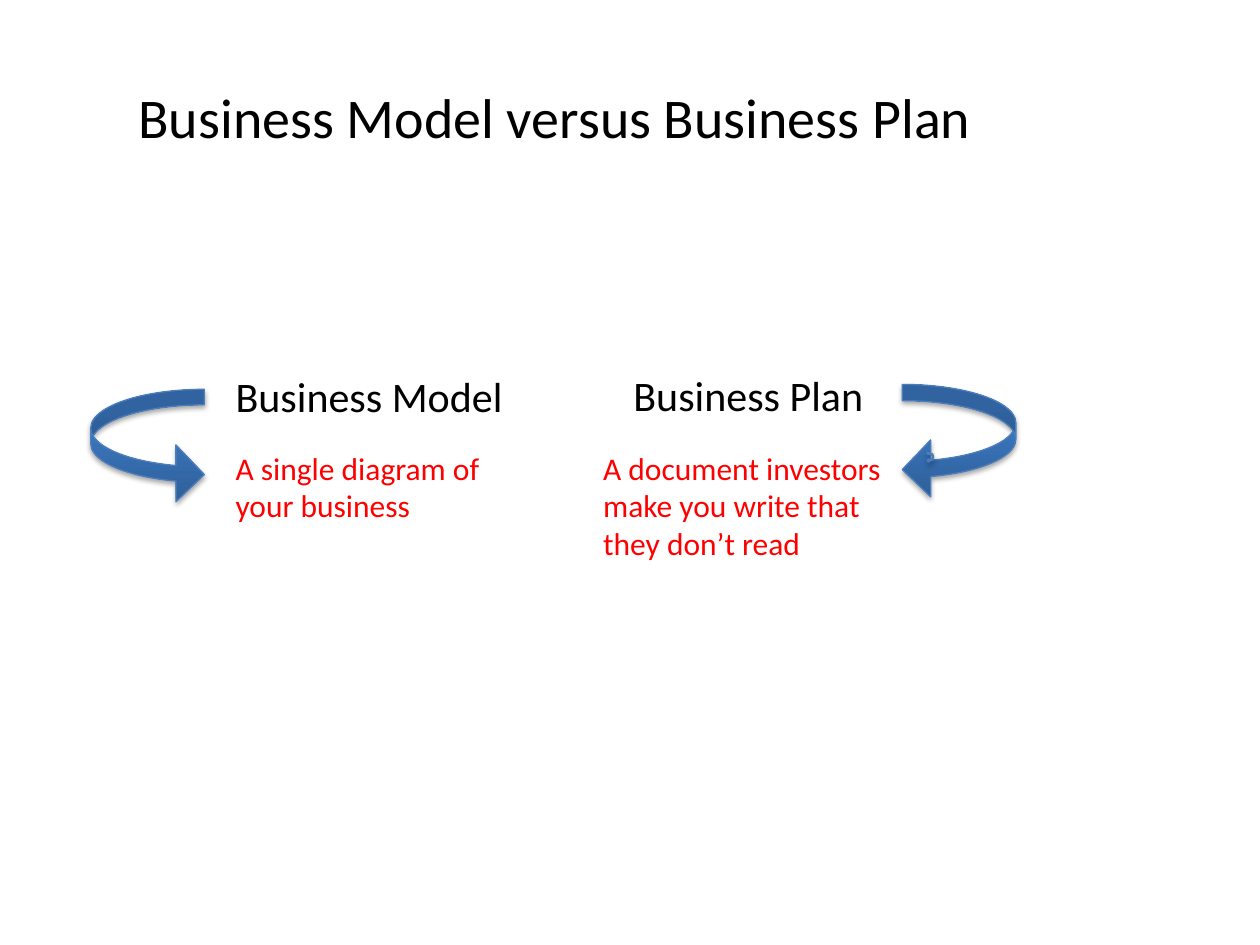
from pptx import Presentation
from pptx.dml.color import RGBColor
from pptx.enum.shapes import MSO_SHAPE as Shape
from pptx.enum.text import MSO_ANCHOR as Anchor, PP_ALIGN as Align
from pptx.oxml import parse_xml
from pptx.util import Cm, Pt

NS = 'xmlns:a="http://schemas.openxmlformats.org/drawingml/2006/main"'
STOPS = [(0, "2F5F99"), (80, "3D7CC7"), (100, "3A7CCB")]
SIDE = 2.29  # side of a curved arrow, cm


def color(code):
    return RGBColor.from_string(code)


def add_text(slide, text, box, size=18, ink="000000", wrap=True,
             align=Align.LEFT, anchor=Anchor.TOP):
    frame = slide.shapes.add_textbox(*map(Cm, box)).text_frame
    frame.word_wrap = wrap
    frame.vertical_anchor = anchor
    para = frame.paragraphs[0]
    para.alignment = align
    run = para.add_run()
    run.text = text
    run.font.name = "Calibri"
    run.font.size = Pt(size)
    run.font.color.rgb = color(ink)


def add_arrow(slide, kind, box, bend=None):
    arrow = slide.shapes.add_shape(kind, *map(Cm, box))
    if bend is not None:
        arrow.adjustments[0] = bend
    arrow.line.color.rgb = color("4B7EBC")
    arrow.line.width = Pt(0.75)
    # Gradient fill goes between geometry and line, shadow after the line
    stops = "".join(
        f'<a:gs pos="{pos * 1000}"><a:srgbClr val="{code}"/></a:gs>'
        for pos, code in STOPS)
    props = arrow.element.spPr
    props.insert(2, parse_xml(
        f'<a:gradFill {NS} rotWithShape="1"><a:gsLst>{stops}</a:gsLst>'
        '<a:lin ang="16200000" scaled="0"/></a:gradFill>'))
    props.append(parse_xml(
        f'<a:effectLst {NS}><a:outerShdw blurRad="{Pt(3.1)}" dist="{Pt(1.8)}" '
        'dir="5400000" rotWithShape="0"><a:srgbClr val="000000">'
        '<a:alpha val="35000"/></a:srgbClr></a:outerShdw></a:effectLst>'))


def add_title(slide, box):
    add_text(slide, "Business Model versus Business Plan", box, size=32,
             align=Align.CENTER, anchor=Anchor.MIDDLE)


def add_model(slide, box):
    x, y, w, h = box
    col = x + 2.67
    # Arrow on the left, text column beside it
    add_arrow(slide, Shape.CURVED_RIGHT_ARROW, (x, y + 0.51, SIDE, SIDE), 0.136)
    add_text(slide, "Business Model", (col, y, x + w - col, 1.27),
             size=24, wrap=False)
    add_text(slide, "A single diagram of your business",
             (col, y + 1.58, 5.59, h - 1.58), ink="FF0000")


def add_plan(slide, box):
    x, y, w, h = box
    edge = x + w - SIDE
    add_text(slide, "Business Plan", (x + 0.61, y, 5.18, 1.27),
             size=24, wrap=False)
    # Arrow on the right, with a tiny one on its head
    add_arrow(slide, Shape.CURVED_LEFT_ARROW, (edge, y + 0.43, SIDE, SIDE), 0.143)
    add_arrow(slide, Shape.CURVED_LEFT_ARROW, (edge + 0.5, y + 1.8, 0.13, 0.2))
    add_text(slide, "A document investors make you write that they don’t read",
             (x, y + 1.6, 6.2, h - 1.6), ink="FF0000")


def main():
    deck = Presentation()
    deck.slide_width, deck.slide_height = Cm(25.4), Cm(19.05)
    slide = deck.slides.add_slide(deck.slide_layouts[6])
    add_title(slide, (1.27, 0.76, 19.84, 3.18))
    add_model(slide, (1.83, 7.34, 8.61, 3.38))
    add_plan(slide, (11.91, 7.32, 8.57, 4.17))
    deck.save("out.pptx")


if __name__ == "__main__":
    main()
